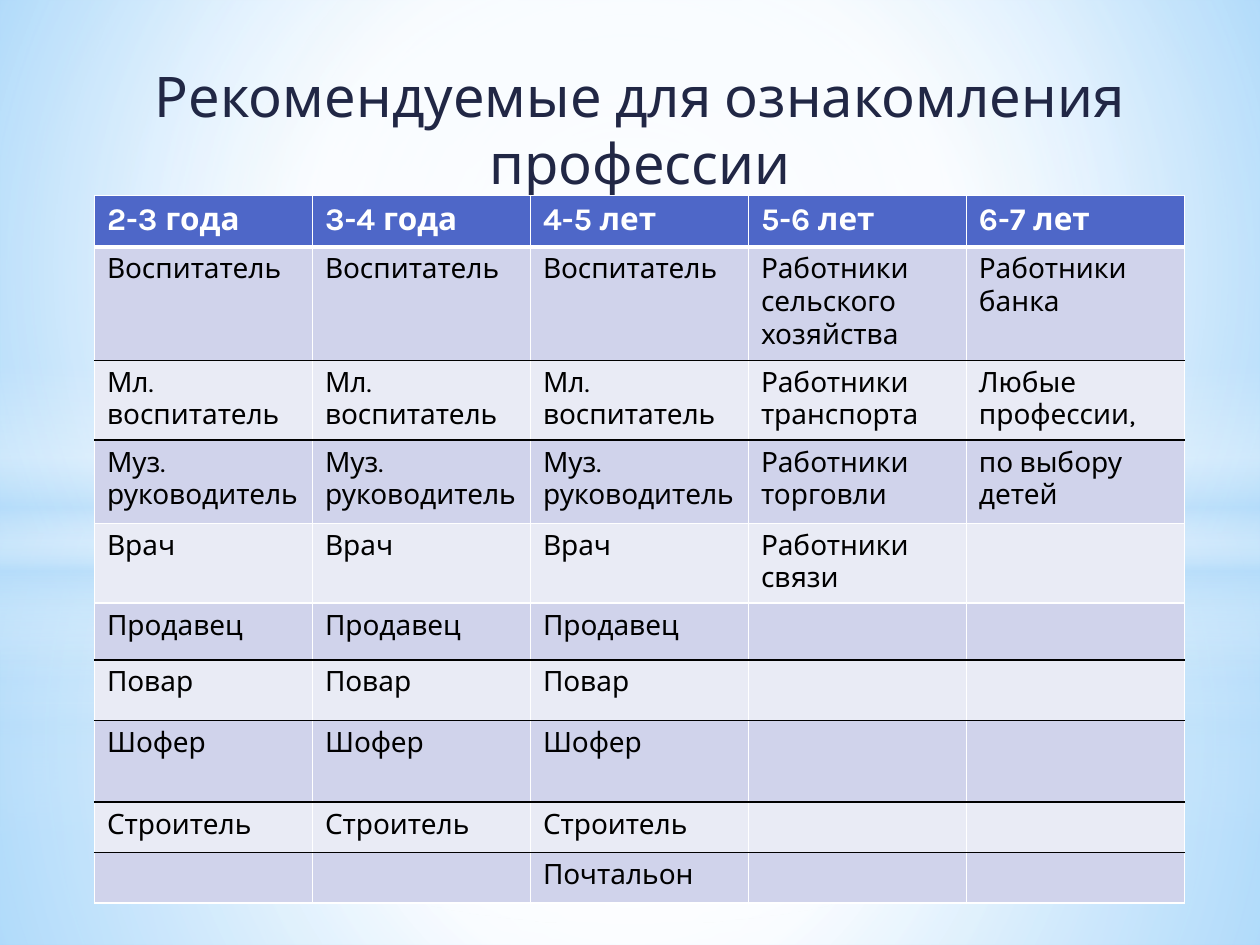
from dataclasses import dataclass
from typing import Any

from lxml import etree
from pptx import Presentation
from pptx.dml.color import RGBColor
from pptx.enum.shapes import MSO_SHAPE
from pptx.enum.text import PP_ALIGN
from pptx.oxml.ns import qn
from pptx.util import Inches, Pt

RECT = MSO_SHAPE.RECTANGLE
OVAL = MSO_SHAPE.OVAL
CENTER = PP_ALIGN.CENTER


@dataclass(frozen=True)
class Theme:
    font: str = "Karla"
    title: str = "212745"
    head: str = "4E67C8"
    odd: str = "D0D3EB"
    even: str = "E9EBF5"
    white: str = "FFFFFF"
    black: str = "000000"
    sky: str = "B4DCFA"
    title_size: int = 32
    head_size: int = 18
    cell_size: int = 16


@dataclass(frozen=True)
class Stop:
    pos: int
    color: str
    alpha: int = 100


@dataclass(frozen=True)
class Blend:
    stops: tuple[Stop, ...]
    focus: tuple[int, ...] = (50, 50, 50, 50)  # left, top, right, bottom
    angle: int | None = None  # a linear blend when set


@dataclass(frozen=True)
class Layer:
    kind: Any
    top: float
    height: float
    blend: Blend


THEME = Theme()

# Sky background
SKY = Blend((Stop(0, "9ED5FF"), Stop(60, THEME.white), Stop(100, "5BB9FF")),
            (20, 10, 20, 60))
BAND = Blend((Stop(0, THEME.white, 0), Stop(29, THEME.white, 30),
              Stop(45, THEME.sky, 40), Stop(55, THEME.white, 26),
              Stop(65, THEME.sky, 60), Stop(100, THEME.white, 0)), angle=90)


def haze(mid: int, first: int, second: int, last: int) -> Blend:
    return Blend((Stop(0, THEME.white, first), Stop(mid, THEME.white, second),
                  Stop(100, THEME.sky, last)))


def glow(end: int) -> Blend:
    return Blend((Stop(0, THEME.white), Stop(end, THEME.white, 0)))


LAYERS = (
    Layer(RECT, 5.58, 1.92, haze(37, 91, 76, 79)),
    Layer(RECT, 0, 5.58, haze(48, 89, 62, 79)),
    Layer(RECT, 4.12, 2.5, BAND),
    Layer(OVAL, 1.75, 5.58, glow(56)),
    Layer(RECT, 4.23, 3.27, haze(37, 92, 77, 80)),
    Layer(RECT, 0, 4.23, haze(48, 90, 63, 80)),
    Layer(RECT, 2.9, 2.5, BAND),
    Layer(OVAL, 1.75, 5.58, glow(54)),
)

# Table content
TITLE = "Рекомендуемые для ознакомления профессии"
AGES = ("2-3 года", "3-4 года", "4-5 лет", "5-6 лет", "6-7 лет")
COMMON = ("Воспитатель", "Мл. воспитатель", "Муз. руководитель", "Врач",
          "Продавец", "Повар", "Шофер", "Строитель")
JOBS = (
    COMMON,
    COMMON,
    COMMON + ("Почтальон",),
    ("Работники сельского хозяйства", "Работники транспорта",
     "Работники торговли", "Работники связи"),
    ("Работники банка", "Любые профессии,", "по выбору детей"),
)
HEIGHTS = (0.41, 0.46, 0.39, 0.66, 0.41, 0.45, 0.48, 0.65, 0.4, 0.4)
COL_WIDTH = 1.73
DARK_EDGES = {2, 3, 6, 7, 8, 9}  # black rules, counted from the table top
THICK_EDGE = 1


def add_color(parent: Any, color: str, alpha: int = 100) -> None:
    node = etree.SubElement(parent, qn("a:srgbClr"), val=color)
    if alpha < 100:
        etree.SubElement(node, qn("a:alpha"), val=str(alpha * 1000))


def paint(fill: Any, root: Any, blend: Blend) -> None:
    """Give a shape or slide a gradient with see-through stops."""
    fill.solid()
    plain = root.find(".//" + qn("a:solidFill"))
    grad = etree.Element(qn("a:gradFill"), rotWithShape="1")
    stops = etree.SubElement(grad, qn("a:gsLst"))
    for stop in blend.stops:
        node = etree.SubElement(stops, qn("a:gs"), pos=str(stop.pos * 1000))
        add_color(node, stop.color, stop.alpha)
    if blend.angle is not None:
        etree.SubElement(grad, qn("a:lin"), ang=str(blend.angle * 60000),
                         scaled="0")
    else:
        way = etree.SubElement(grad, qn("a:path"), path="circle")
        sides = {k: str(v * 1000) for k, v in zip("ltrb", blend.focus)}
        etree.SubElement(way, qn("a:fillToRect"), **sides)
    plain.getparent().replace(plain, grad)


def add_layer(slide: Any, layer: Layer) -> None:
    shape = slide.shapes.add_shape(layer.kind, Inches(0), Inches(layer.top),
                                   Inches(10), Inches(layer.height))
    shape.shadow.inherit = False
    shape.line.fill.background()
    paint(shape.fill, shape.element, layer.blend)


def style(para: Any, size: int, color: str, bold: bool = False) -> None:
    for run in para.runs:
        font = run.font
        font.name, font.size, font.bold = THEME.font, Pt(size), bold
        font.color.rgb = RGBColor.from_string(color)


def add_title(slide: Any) -> None:
    box = slide.shapes.add_textbox(Inches(0.59), Inches(0.44),
                                   Inches(8.98), Inches(0.91))
    box.text_frame.word_wrap = True
    box.text_frame.text = TITLE
    para = box.text_frame.paragraphs[0]
    para.alignment = CENTER
    para.space_before, para.space_after = Pt(6.4), Pt(3)
    style(para, THEME.title_size, THEME.title)


def add_edge(props: Any, side: str, color: str, width: int) -> None:
    line = etree.SubElement(props, qn("a:ln" + side), w=str(Pt(width)))
    add_color(etree.SubElement(line, qn("a:solidFill")), color)


def set_cell(cell: Any, row: int, text: str) -> None:
    props = cell._tc.get_or_add_tcPr()
    for side in "LR":
        add_edge(props, side, THEME.white, 1)
    for side, edge in (("T", row), ("B", row + 1)):
        color = THEME.black if edge in DARK_EDGES else THEME.white
        add_edge(props, side, color, 3 if edge == THICK_EDGE else 1)
    back = THEME.head if row == 0 else THEME.odd if row % 2 else THEME.even
    cell.fill.solid()
    cell.fill.fore_color.rgb = RGBColor.from_string(back)
    if text:
        cell.text_frame.text = text
        para = cell.text_frame.paragraphs[0]
        if row == 0:
            style(para, THEME.head_size, THEME.white, True)
        else:
            style(para, THEME.cell_size, THEME.black)


def add_jobs(slide: Any) -> None:
    frame = slide.shapes.add_table(len(HEIGHTS), len(AGES), Inches(0.75),
                                   Inches(1.55), Inches(8.66), Inches(5.62))
    table = frame.table
    table.horz_banding = False
    for row, height in zip(table.rows, HEIGHTS):
        row.height = Inches(height)
    for col, (age, jobs) in enumerate(zip(AGES, JOBS)):
        table.columns[col].width = Inches(COL_WIDTH)
        words = (age,) + jobs
        for row in range(len(HEIGHTS)):
            text = words[row] if row < len(words) else ""
            set_cell(table.cell(row, col), row, text)
    frame.height = Inches(5.62)


def main() -> None:
    deck = Presentation()
    deck.slide_width, deck.slide_height = Inches(10), Inches(7.5)
    slide = deck.slides.add_slide(deck.slide_layouts[6])
    paint(slide.background.fill, slide.element, SKY)
    for layer in LAYERS:
        add_layer(slide, layer)
    add_title(slide)
    add_jobs(slide)
    deck.save("out.pptx")


if __name__ == "__main__":
    main()
